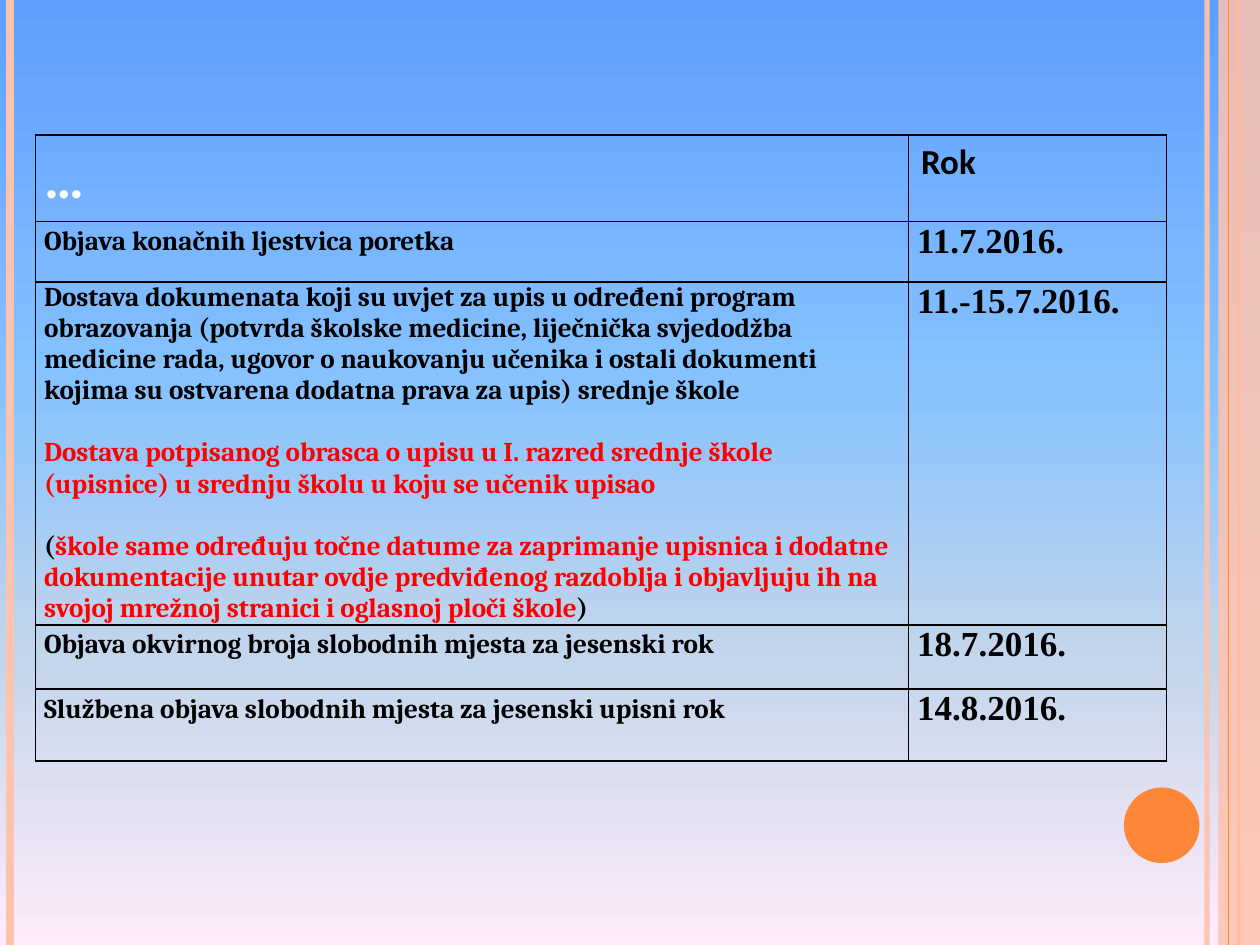
from lxml.etree import SubElement
from pptx import Presentation
from pptx.dml.color import RGBColor
from pptx.enum.shapes import MSO_CONNECTOR, MSO_SHAPE
from pptx.oxml.ns import qn
from pptx.util import Inches, Pt

BLACK, RED, WHITE = "000000", "FF0000", "FFFFFF"
ORANGE, PEACH = "FE8637", "FEC3AE"


def paint(color, value, alpha=None):
    """Set a colour from a hex string, with opacity in percent."""
    color.rgb = RGBColor.from_string(value)
    if alpha:
        clr = color._xFill.find(qn("a:srgbClr"))
        SubElement(clr, qn("a:alpha"), val=str(alpha * 1000))


def add_shape(kind, x, y, w, h, color, alpha=None):
    sp = s.shapes.add_shape(kind, Inches(x), Inches(y), Inches(w), Inches(h))
    sp.shadow.inherit = False
    sp.fill.solid()
    paint(sp.fill.fore_color, color, alpha)
    sp.line.fill.background()


prs = Presentation()
prs.slide_width, prs.slide_height = Inches(10), Inches(7.5)
s = prs.slides.add_slide(prs.slide_layouts[6])

# Background gradient, top to bottom
fill = s.background.fill
fill.gradient()
fill.gradient_angle = 270
stops = s.element.find(".//" + qn("a:gsLst"))
for stop in list(stops):
    stops.remove(stop)
for pos, color in [(0, "5E9EFF"), (40, "85C2FF"), (70, "C4D6EB"), (100, "FFEBFA")]:
    stop = SubElement(stops, qn("a:gs"), pos=str(pos * 1000))
    SubElement(stop, qn("a:srgbClr"), val=color)

# Side stripes; the band lies between the third and the fourth line
for x, color, width, alpha in [(9.58, PEACH, 3, 93), (0.08, PEACH, 4.5, None),
                               (9.83, ORANGE, 1.5, None), (9.75, ORANGE, 0.75, None)]:
    if x == 9.75:
        add_shape(MSO_SHAPE.RECTANGLE, 9.67, 0, 0.33, 7.5, PEACH, 87)
    line = s.shapes.add_connector(MSO_CONNECTOR.STRAIGHT, Inches(x), 0, Inches(x), Inches(7.5))
    line.line.width = Pt(width)
    line.line.fill.solid()
    paint(line.line.fill.fore_color, color, alpha)
    SubElement(line._element.spPr, qn("a:effectLst"))
add_shape(MSO_SHAPE.OVAL, 8.92, 6.25, 0.6, 0.6, ORANGE)

# Each cell: font, size, line spacing, paragraphs of (text, colour) runs
task = ("Cambria", 15.5, 1.15)
long_task = ("Cambria", 15.5, 1)
date = ("Times New Roman", 20, 1)
rows = [
    [("Calibri", 32, 1.15, [[("…", WHITE)]]), ("Calibri", 20, 1.15, [[("Rok", BLACK)]])],
    [(*task, [[("Objava konačnih ljestvica poretka", BLACK)]]),
     (*date, [[("11.7.2016.", BLACK)]])],
    [(*long_task, [
        [("Dostava dokumenata koji su uvjet za upis u određeni program obrazovanja "
          "(potvrda školske medicine, liječnička svjedodžba medicine rada, ugovor o "
          "naukovanju učenika i ostali dokumenti kojima su ostvarena dodatna prava za "
          "upis) srednje škole", BLACK)],
        [("Dostava potpisanog obrasca o upisu u I. razred srednje škole (upisnice) u "
          "srednju školu u koju se učenik upisao", RED)],
        [("(", BLACK),
         ("škole same određuju točne datume za zaprimanje upisnica i dodatne "
          "dokumentacije unutar ovdje predviđenog razdoblja i objavljuju ih na svojoj "
          "mrežnoj stranici i oglasnoj ploči škole", RED),
         (")", BLACK)]]),
     (*date, [[("11.-15.7.2016.", BLACK)]])],
    [(*task, [[("Objava okvirnog broja slobodnih mjesta za jesenski rok", BLACK)]]),
     (*date, [[("18.7.2016.", BLACK)]])],
    [(*task, [[("Službena objava slobodnih mjesta za jesenski upisni rok", BLACK)]]),
     (*date, [[("14.8.2016.", BLACK)]])],
]
widths = [6.93, 2.05]
heights = [0.69, 0.48, 2.72, 0.51, 0.57]
table = s.shapes.add_table(len(rows), len(widths), Inches(0.28), Inches(1.07),
                           Inches(sum(widths)), Inches(sum(heights))).table
table.horz_banding = False
for col, width in zip(table.columns, widths):
    col.width = Inches(width)
for row, height in zip(table.rows, heights):
    row.height = Inches(height)

for i, row in enumerate(rows):
    for j, (font, size, spacing, paragraphs) in enumerate(row):
        cell = table.cell(i, j)
        tcPr = cell._tc.get_or_add_tcPr()
        for side in ("lnL", "lnR", "lnT", "lnB"):
            ln = SubElement(tcPr, qn("a:" + side), w=str(Pt(1)))
            SubElement(SubElement(ln, qn("a:solidFill")), qn("a:srgbClr"), val=BLACK)
        cell.fill.background()
        cell.margin_left = Inches(0.1 if (i, j) == (0, 1) else 0.07)
        cell.margin_right = Inches(0.07)
        cell.margin_top = cell.margin_bottom = 0
        tf = cell.text_frame
        for n, runs in enumerate(paragraphs):
            p = tf.add_paragraph() if n else tf.paragraphs[0]
            p.line_spacing = spacing
            p.space_before = Pt(17.7 if n else 0)
            for text, color in runs:
                r = p.add_run()
                r.text = text
                r.font.name, r.font.size, r.font.bold = font, Pt(size), True
                paint(r.font.color, color)

prs.save("out.pptx")
